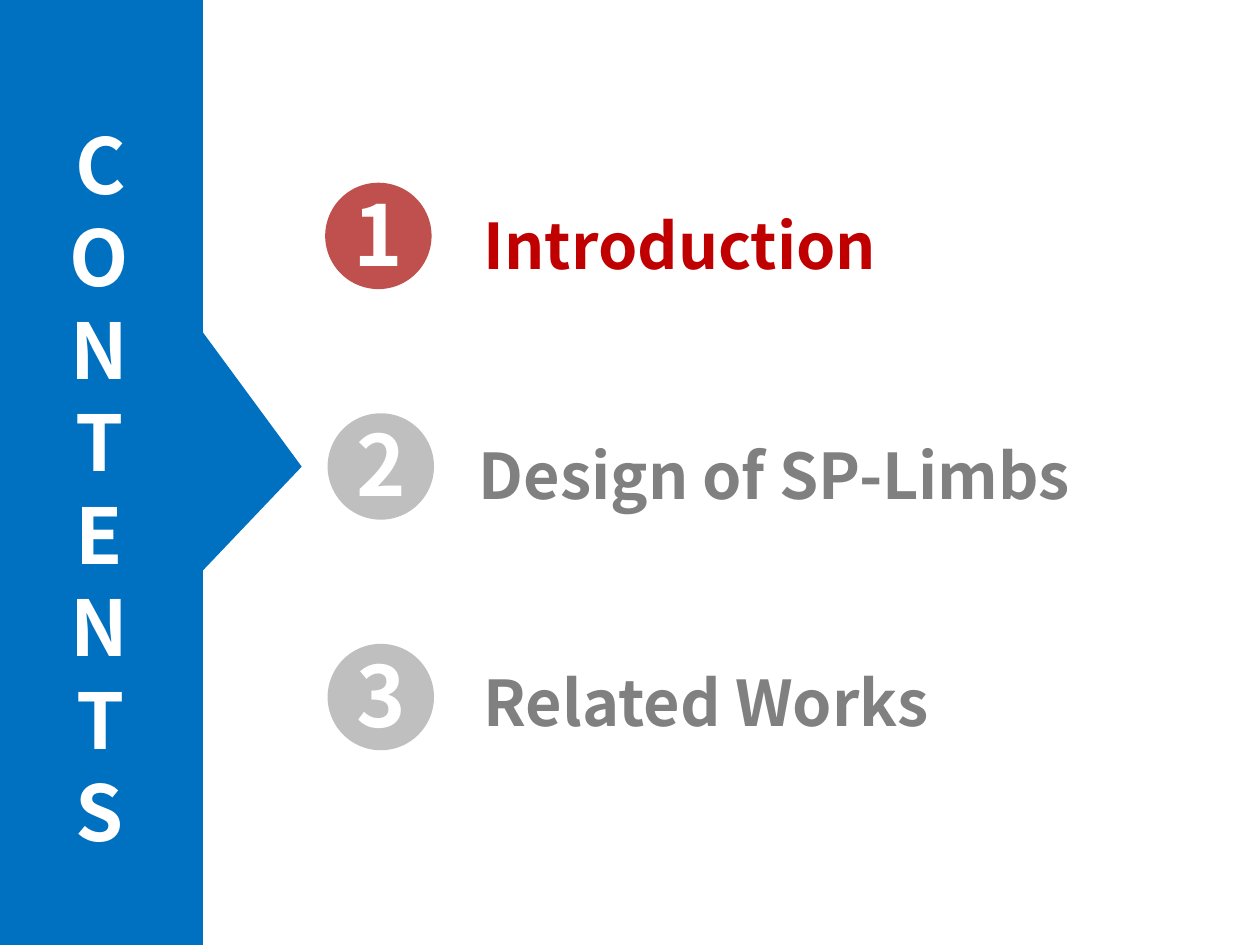
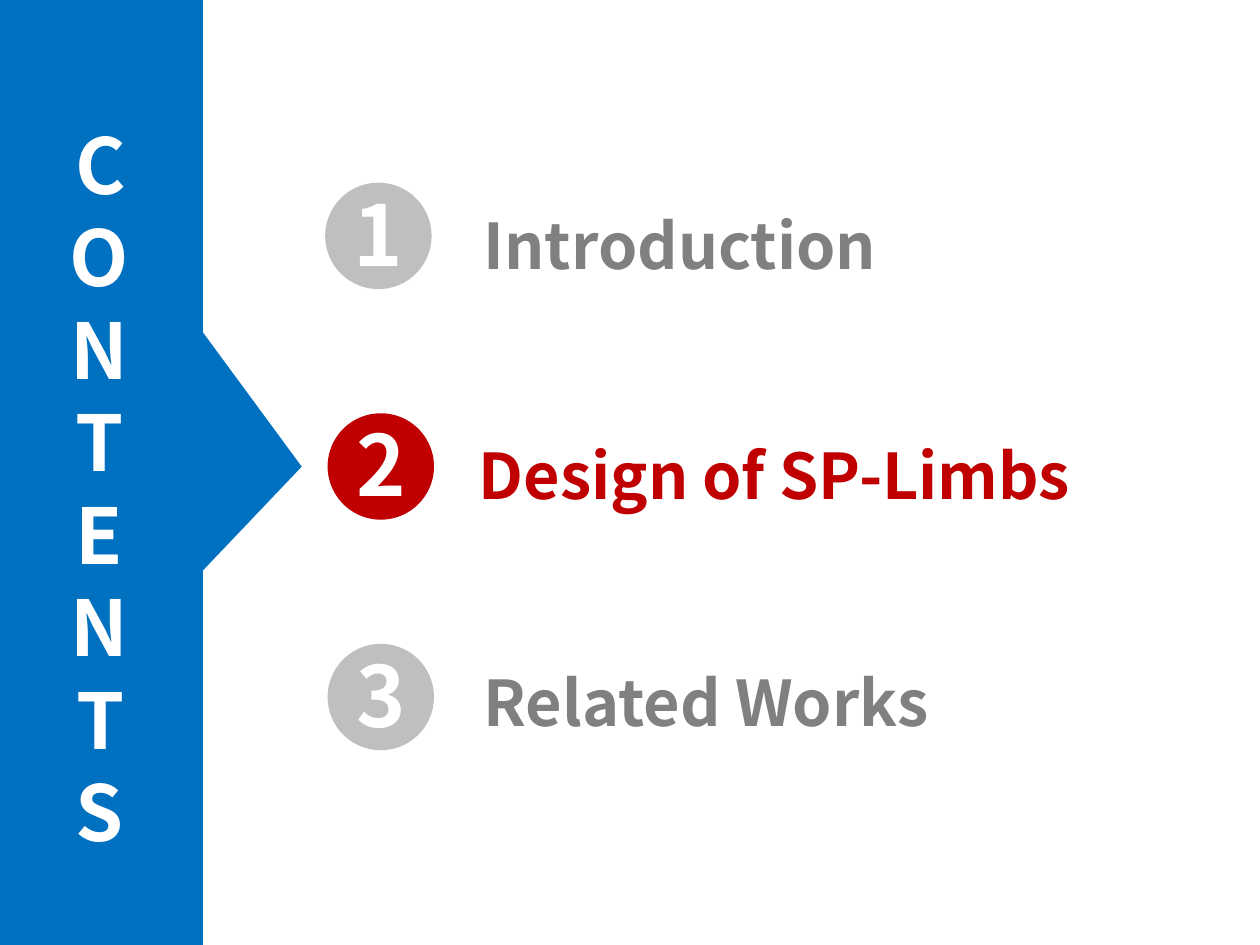
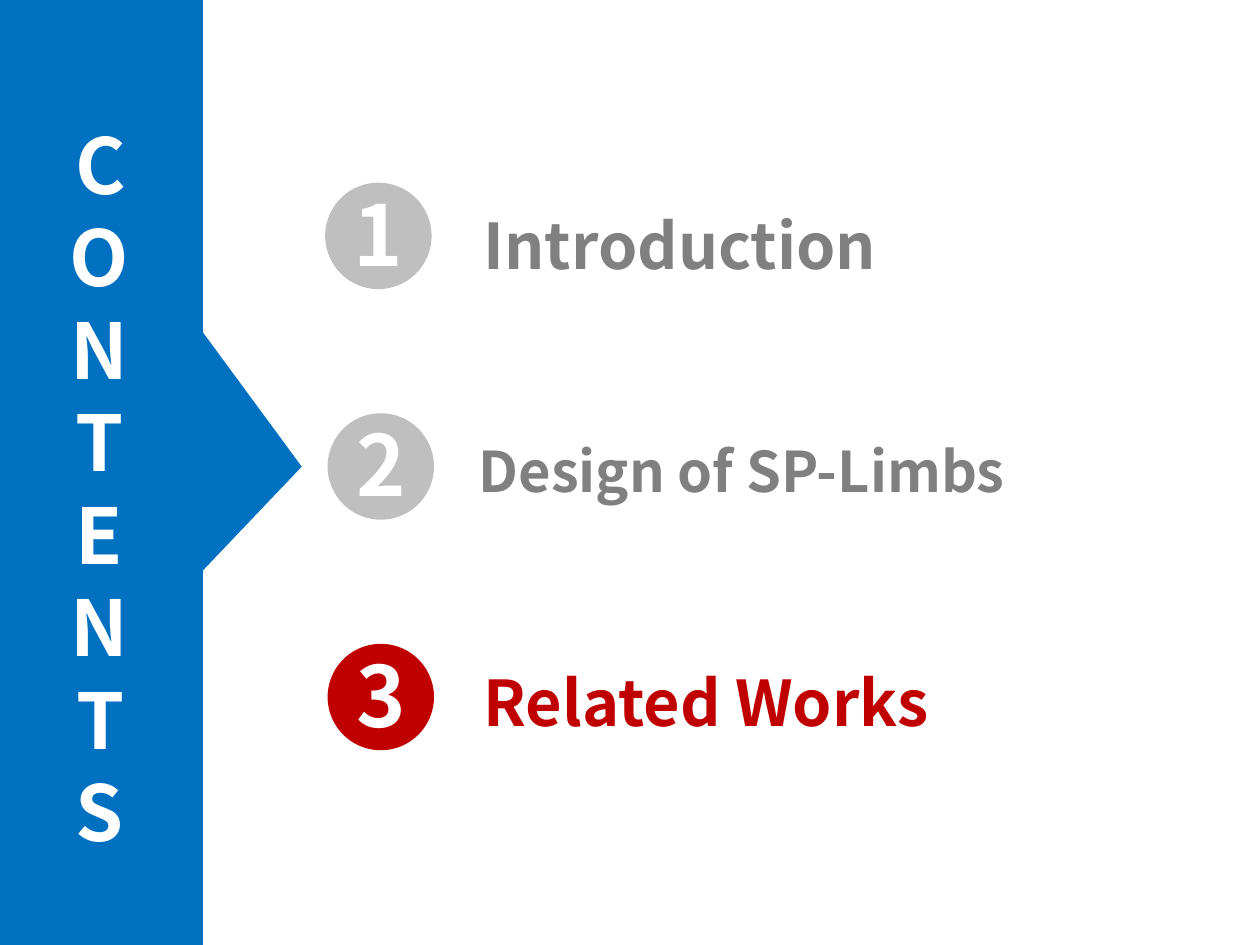
"""Build three contents slides, each highlighting one section."""
from pptx import Presentation
from pptx.dml.color import RGBColor
from pptx.enum import shapes, text
from pptx.util import Pt

BLUE = RGBColor(0x00, 0x70, 0xC0)
RED = RGBColor(0xC0, 0x00, 0x00)
BRICK = RGBColor(0xC0, 0x50, 0x4D)
SILVER = RGBColor(0xBF, 0xBF, 0xBF)
GRAY = RGBColor(0x80, 0x80, 0x80)
WHITE = RGBColor(0xFF, 0xFF, 0xFF)

FONT = "Noto Sans CJK SC"
HEADING = "CONTENTS"
SECTIONS = [
    {"title": "Introduction", "circle_x": 185.8, "label": (269.3, 111.6, 281, 51)},
    {"title": "Design of SP-Limbs", "circle_x": 187.2, "label": (266.4, 243.4, 369.4, 51)},
    {"title": "Related Works", "circle_x": 187.2, "label": (269.3, 373, 291, 51)},
]
SLIDES = [
    {"active": 0, "circle": BRICK, "sizes": (36, 36, 36)},
    {"active": 1, "circle": RED, "sizes": (36, 36, 36)},
    {"active": 2, "circle": RED, "sizes": (36, 32, 36)},
]
CIRCLE_TOP, CIRCLE_STEP, CIRCLE_SIZE = 104.4, 131.76, 60.8
LINE_RATIO, TOP_RATIO = 1.2, 0.07


def add_filled(s, kind, box, color):
    sp = s.shapes.add_shape(kind, *map(Pt, box))
    sp.shadow.inherit = False
    sp.fill.solid()
    sp.fill.fore_color.rgb = color
    sp.line.fill.background()
    return sp


def write(sp, content, size, color, align, **frame):
    tf = sp.text_frame
    for name, value in {"word_wrap": True, **frame}.items():
        setattr(tf, name, value)
    p = tf.paragraphs[0]
    p.alignment = align
    r = p.add_run()
    r.text = content
    for name, value in {"name": FONT, "size": Pt(size), "bold": True}.items():
        setattr(r.font, name, value)
    r.font.color.rgb = color
    return p


def add_label(s, box, content, size, color, align=text.PP_ALIGN.LEFT):
    sp = s.shapes.add_textbox(*map(Pt, box))
    p = write(sp, content, size, color, align, margin_top=Pt(3.6 + TOP_RATIO * size))
    p.line_spacing = Pt(LINE_RATIO * size)


def add_number(s, number, left, color):
    top = CIRCLE_TOP + (number - 1) * CIRCLE_STEP
    sp = add_filled(s, shapes.MSO_SHAPE.OVAL, (left, top, CIRCLE_SIZE, CIRCLE_SIZE), color)
    write(sp, str(number), 48, WHITE, text.PP_ALIGN.CENTER, margin_left=0, margin_right=0,
          margin_bottom=Pt(7.2), vertical_anchor=text.MSO_ANCHOR.MIDDLE)


def add_band(s):
    arrow = add_filled(s, shapes.MSO_SHAPE.ISOSCELES_TRIANGLE, (-121, 154.1, 414.7, 172.1), BLUE)
    arrow.rotation = 90
    arrow.adjustments[0] = 0.564
    add_filled(s, shapes.MSO_SHAPE.RECTANGLE, (-2.9, 0, 118.8, 540), BLUE)
    add_label(s, (28.1, 60.5, 57.6, 455.8), HEADING, 44, WHITE, text.PP_ALIGN.CENTER)


def main():
    prs = Presentation()
    prs.slide_width, prs.slide_height = Pt(720), Pt(540)
    for spec_row in SLIDES:
        s = prs.slides.add_slide(prs.slide_layouts[6])
        add_band(s)
        for i, (section, size) in enumerate(zip(SECTIONS, spec_row["sizes"])):
            active = i == spec_row["active"]
            add_number(s, i + 1, section["circle_x"], spec_row["circle"] if active else SILVER)
            add_label(s, section["label"], section["title"], size, RED if active else GRAY)
    prs.save("out.pptx")


if __name__ == "__main__":
    main()
